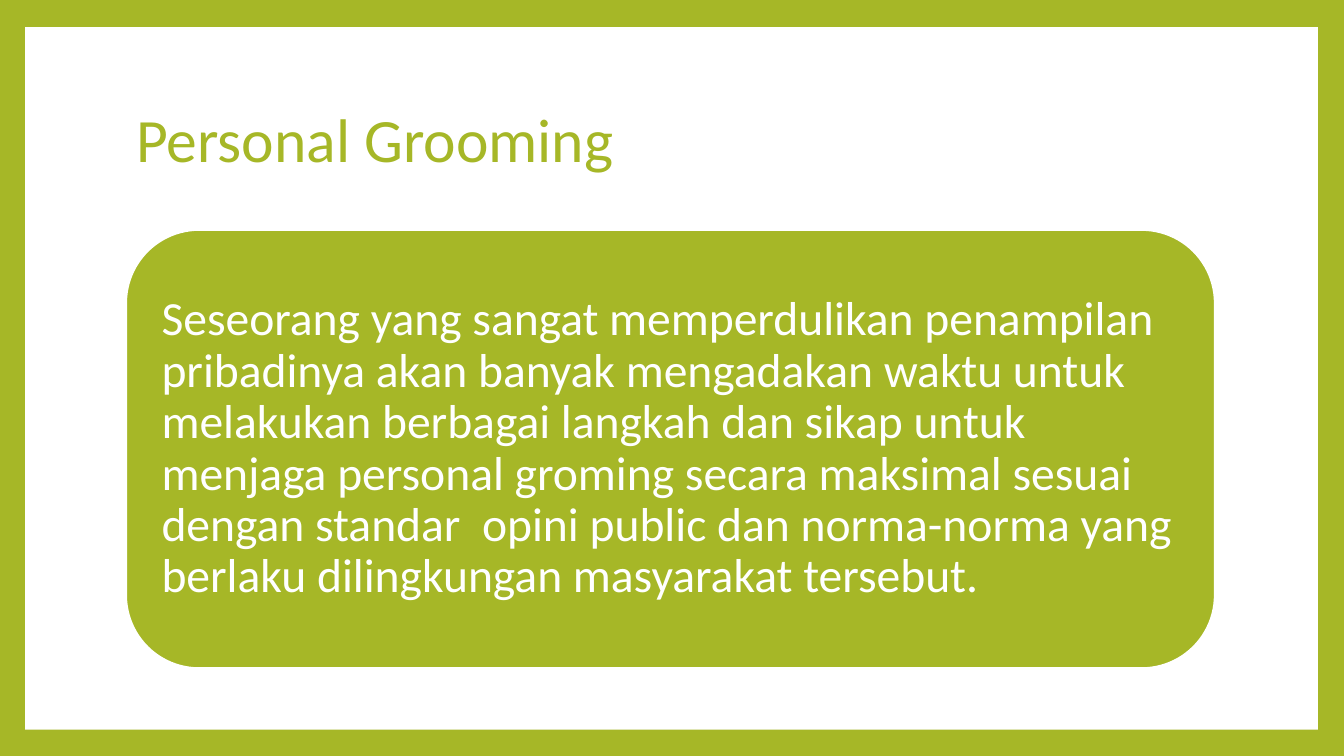
"""Build the Personal Grooming slide."""
from pptx import Presentation
from pptx.dml.color import RGBColor
from pptx.enum.shapes import MSO_SHAPE
from pptx.enum.text import MSO_ANCHOR, MSO_AUTO_SIZE, PP_ALIGN
from pptx.util import Inches, Pt

GREEN = RGBColor(0xA6, 0xB7, 0x27)
WHITE = RGBColor(0xFF, 0xFF, 0xFF)
FONT = "Calibri"
CONTENT_LEFT = Inches(1.25)
CONTENT_WIDTH = Inches(10.8)
STATEMENT = (
    "Seseorang yang sangat memperdulikan penampilan pribadinya akan banyak "
    "mengadakan waktu untuk melakukan berbagai langkah dan sikap untuk "
    "menjaga personal groming secara maksimal sesuai dengan standar  opini "
    "public dan norma-norma yang berlaku dilingkungan masyarakat tersebut."
)


def write_text(shape, text, size, color):
    """Fill a shape with one left-aligned, vertically centred paragraph."""
    text_frame = shape.text_frame
    text_frame.text = text
    text_frame.word_wrap = True
    text_frame.auto_size = MSO_AUTO_SIZE.NONE
    text_frame.vertical_anchor = MSO_ANCHOR.MIDDLE
    paragraph = text_frame.paragraphs[0]
    paragraph.alignment = PP_ALIGN.LEFT
    paragraph.line_spacing = 0.9
    font = paragraph.runs[0].font
    font.name = FONT
    font.size = Pt(size)
    font.color.rgb = color


def add_panel(slide, kind, left, top, width, height, color):
    """Add a filled shape without outline or shadow."""
    shape = slide.shapes.add_shape(kind, left, top, width, height)
    shape.shadow.inherit = False
    shape.fill.solid()
    shape.fill.fore_color.rgb = color
    shape.line.fill.background()
    return shape


def add_frame(slide):
    """Set a green background with a white panel behind everything else."""
    slide.background.fill.solid()
    slide.background.fill.fore_color.rgb = GREEN
    panel = add_panel(slide, MSO_SHAPE.RECTANGLE, Inches(0.25), Inches(0.27),
                      Inches(12.82), Inches(6.97), WHITE)
    slide.shapes.title.element.addprevious(panel.element)


def set_title(slide, text):
    """Place and format the title placeholder."""
    title = slide.shapes.title
    title.left, title.top = CONTENT_LEFT, Inches(0.67)
    title.width, title.height = CONTENT_WIDTH, Inches(1.48)
    write_text(title, text, 44, GREEN)


def add_statement(slide, text):
    """Add the rounded green box with its statement."""
    box = add_panel(slide, MSO_SHAPE.ROUNDED_RECTANGLE, CONTENT_LEFT,
                    Inches(2.28), CONTENT_WIDTH, Inches(4.35), GREEN)
    box.line.color.rgb = WHITE
    box.line.width = Pt(1.5)
    write_text(box, text, 34, WHITE)
    text_frame = box.text_frame
    text_frame.margin_left = text_frame.margin_right = Inches(0.14)
    text_frame.margin_top = text_frame.margin_bottom = Inches(0.14)


def main():
    """Create and save the presentation."""
    presentation = Presentation()
    presentation.slide_width = Inches(13.33)
    presentation.slide_height = Inches(7.5)
    slide = presentation.slides.add_slide(presentation.slide_layouts[5])
    add_frame(slide)
    set_title(slide, "Personal Grooming")
    add_statement(slide, STATEMENT)
    presentation.save("out.pptx")


if __name__ == "__main__":
    main()
